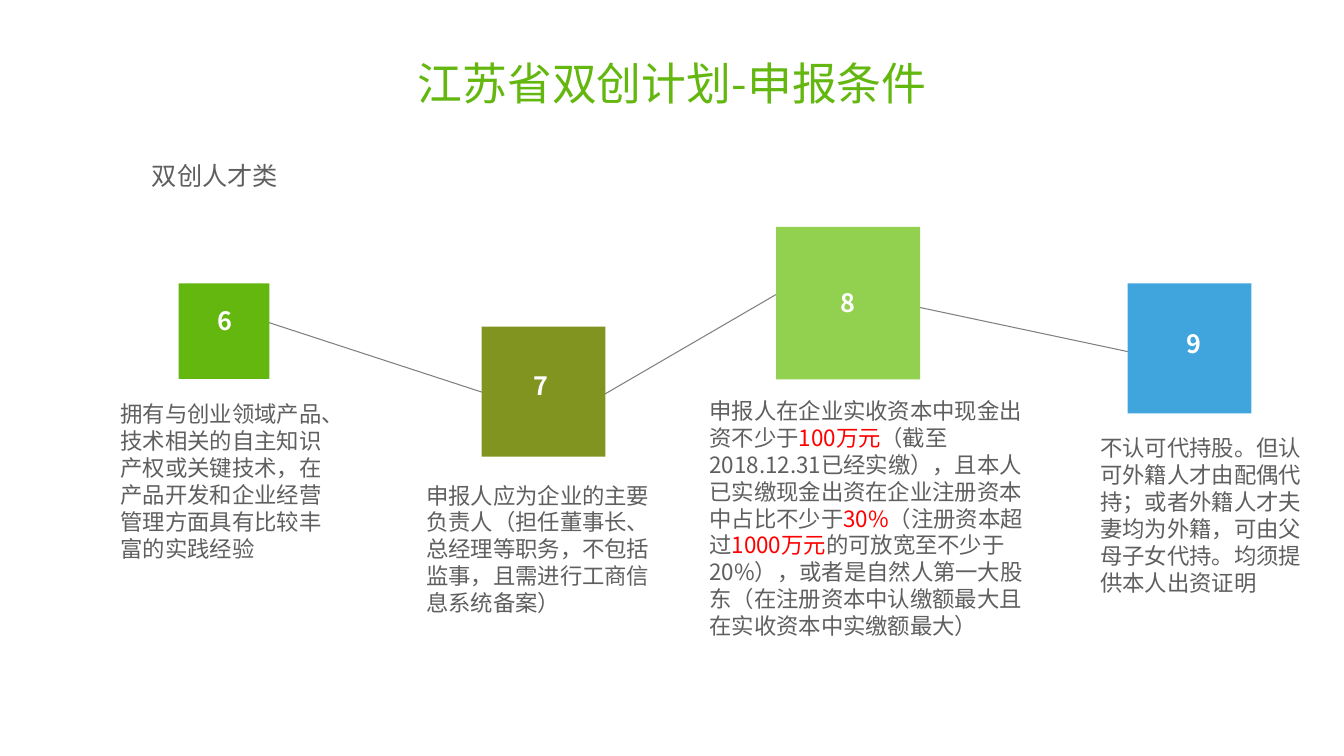
"""Build the slide on application conditions 6 to 9 of the talent plan."""
from typing import NamedTuple

import lxml.etree
import pptx
import pptx.dml.color
import pptx.enum.shapes
import pptx.enum.text
import pptx.oxml.ns
import pptx.util

Cm = pptx.util.Cm
Align = pptx.enum.text.PP_ALIGN
Anchor = pptx.enum.text.MSO_ANCHOR
SANS = "Noto Sans CJK SC"
COLORS = {
    "green": "63B70F", "olive": "819420", "lime": "92D050", "blue": "40A5DD",
    "gray": "5F5F5F", "line": "7F7F7F", "red": "FF0000", "white": "FFFFFF",
}


class Area(NamedTuple):
    left: float
    top: float
    width: float
    height: float


class Style(NamedTuple):
    size: int
    color: str
    font: str = SANS
    bold: bool = False
    align: Align = Align.LEFT
    lead: float = 1.0
    anchor: Anchor = Anchor.TOP
    wrap: bool = True
    inset: tuple[float, float] = (0.25, 0.13)


class Step(NamedTuple):
    number: str
    color: str
    tile: Area
    label: tuple[float, float]
    note: Area
    texts: list[str]


class Link(NamedTuple):
    left: float
    top: float
    right: float
    end: float


TITLE = Style(32, "green", align=Align.CENTER, lead=0.9, anchor=Anchor.MIDDLE)
GROUP = Style(18, "gray", font="Arial", lead=1.3, wrap=False)
LABEL = Style(18, "white", bold=True, align=Align.CENTER, inset=(0.18, 0.1))
NOTE = Style(16, "gray")

LINKS = [
    Link(6.78, 8.13, 12.14, 9.88),
    Link(15.19, 9.96, 19.56, 7.42),
    Link(22.58, 7.62, 28.42, 8.86),
]
STEPS = [
    Step("6", "green", Area(4.5, 7.14, 2.29, 2.41), (4.62, 7.59),
         Area(2.79, 9.96, 5.79, 4.37),
         ["拥有与创业领域产品、技术相关的自主知识产权或关键技术，"
          "在产品开发和企业经营管理方面具有比较丰富的实践经验"]),
    Step("7", "olive", Area(12.14, 8.23, 3.12, 3.28), (12.57, 9.22),
         Area(10.49, 12.01, 6.4, 3.68),
         ["申报人应为企业的主要负责人（担任董事长、总经理等职务，"
          "不包括监事，且需进行工商信息系统备案）"]),
    Step("8", "lime", Area(19.56, 5.72, 3.63, 3.84), (20.32, 7.14),
         Area(17.63, 9.88, 8.53, 6.4),
         ["申报人在企业实收资本中现金出资不少于", "100万元",
          "（截至2018.12.31已经实缴），且本人已实缴现金出资在企业注册资本中占比不少于",
          "30%", "（注册资本超过", "1000万元",
          "的可放宽至不少于20%），或者是自然人第一大股东"
          "（在注册资本中认缴额最大且在实收资本中实缴额最大）"]),
    Step("9", "blue", Area(28.42, 7.14, 3.12, 3.28), (29.03, 8.18),
         Area(27.48, 10.82, 5.69, 4.37),
         ["不认可代持股。但认可外籍人才由配偶代持；或者外籍人才夫妻均为外籍，"
          "可由父母子女代持。均须提供本人出资证明"]),
]


def paint(name: str) -> pptx.dml.color.RGBColor:
    """Return the named colour."""
    return pptx.dml.color.RGBColor.from_string(COLORS[name])


def write(shapes, area: Area, texts: list[str], style: Style) -> None:
    """Add a text box in which every second text is red."""
    frame = shapes.add_textbox(*map(Cm, area)).text_frame
    frame.word_wrap = style.wrap
    frame.vertical_anchor = style.anchor
    frame.margin_left = frame.margin_right = Cm(style.inset[0])
    frame.margin_top = frame.margin_bottom = Cm(style.inset[1])
    para = frame.paragraphs[0]
    para.alignment = style.align
    para.line_spacing = style.lead
    font = para.font
    font.size = pptx.util.Pt(style.size)
    font.bold = style.bold
    font.color.rgb = paint(style.color)
    font.name = style.font
    qn = pptx.oxml.ns.qn
    props = para._p.pPr.find(qn("a:defRPr"))
    lxml.etree.SubElement(props, qn("a:ea"), typeface=style.font)
    for index, text in enumerate(texts):
        run = para.add_run()
        run.text = text
        if index % 2:
            run.font.color.rgb = paint("red")


def join(shapes, link: Link) -> None:
    """Draw a thin line between two tiles."""
    kind = pptx.enum.shapes.MSO_CONNECTOR.STRAIGHT
    line = shapes.add_connector(kind, *map(Cm, link))
    line.line.color.rgb = paint("line")
    line.line.width = pptx.util.Pt(0.75)
    lxml.etree.SubElement(line._element.spPr, pptx.oxml.ns.qn("a:effectLst"))


def draw(shapes, step: Step) -> None:
    """Draw a tile with its number and note."""
    kind = pptx.enum.shapes.MSO_SHAPE.RECTANGLE
    tile = shapes.add_shape(kind, *map(Cm, step.tile))
    tile.shadow.inherit = False
    tile.fill.solid()
    tile.fill.fore_color.rgb = paint(step.color)
    tile.line.fill.background()
    write(shapes, Area(*step.label, 2.11, 0.97), [step.number], LABEL)
    write(shapes, step.note, step.texts, NOTE)


def main() -> None:
    """Build and save the deck."""
    deck = pptx.Presentation()
    deck.slide_width, deck.slide_height = Cm(33.87), Cm(19.05)
    shapes = deck.slides.add_slide(deck.slide_layouts[6]).shapes
    write(shapes, Area(5.51, 0.76, 22.86, 2.82), ["江苏省双创计划-申报条件"], TITLE)
    write(shapes, Area(3.58, 3.68, 3.68, 1.24), ["双创人才类"], GROUP)
    for link in LINKS:
        join(shapes, link)
    for step in STEPS:
        draw(shapes, step)
    deck.save("out.pptx")


if __name__ == "__main__":
    main()
